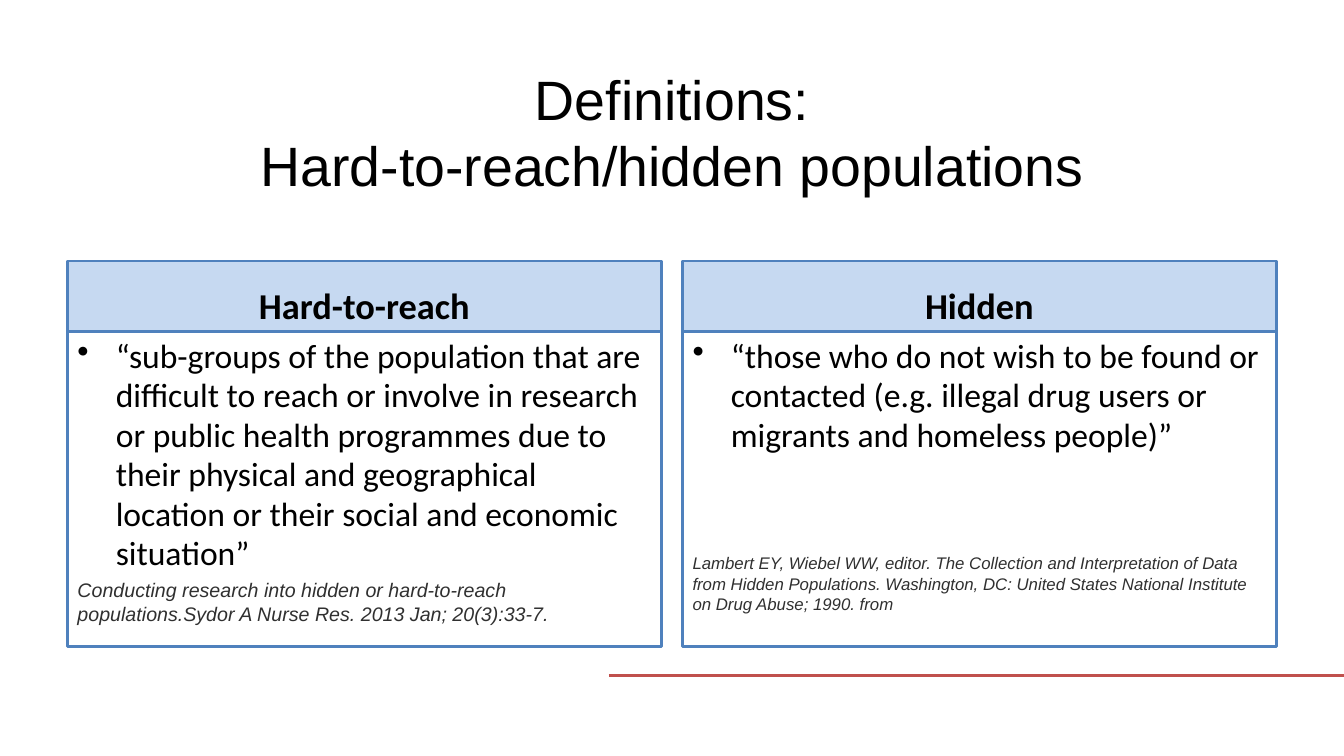
import pptx
import pptx.util
import pptx.dml.color
import pptx.enum.shapes
import pptx.enum.text
from lxml import etree

Inches, Pt = pptx.util.Inches, pptx.util.Pt
RGBColor = pptx.dml.color.RGBColor
ALIGN, ANCHOR = pptx.enum.text.PP_ALIGN, pptx.enum.text.MSO_ANCHOR

BLACK = RGBColor(0x00, 0x00, 0x00)
WHITE = RGBColor(0xFF, 0xFF, 0xFF)
CITATION_GREY = RGBColor(0x30, 0x30, 0x30)
HEADING_FILL = RGBColor(0xC6, 0xD9, 0xF1)
BORDER_BLUE = RGBColor(0x4F, 0x81, 0xBD)
RULE_RED = RGBColor(0xC0, 0x50, 0x4D)

SLIDE_W, SLIDE_H = 13.33, 7.5
MARGIN, GUTTER = 0.67, 0.21
CONTENT_W = SLIDE_W - 2 * MARGIN
COLUMN_W = (CONTENT_W - GUTTER) / 2
COLUMN_TOP, COLUMN_H, HEADING_H = 2.59, 3.82, 0.7
BULLET_INDENT = Inches(0.38)

# heading, definition, citation, citation size, space before citation
DEFINITIONS = [
    ("Hard-to-reach",
     "“sub-groups of the population that are difficult to reach or involve in research "
     "or public health programmes due to their physical and geographical location or "
     "their social and economic situation”",
     "Conducting research into hidden or hard-to-reach populations."
     "Sydor A Nurse Res. 2013 Jan; 20(3):33-7.", 14, 3),
    ("Hidden",
     "“those who do not wish to be found or contacted (e.g. illegal drug users or "
     "migrants and homeless people)”",
     "Lambert EY, Wiebel WW, editor. The Collection and Interpretation of Data from "
     "Hidden Populations. Washington, DC: United States National Institute on Drug "
     "Abuse; 1990. from", 12, 70),
]


def format_text(paragraph, size, face, color=BLACK, align=ALIGN.LEFT, bold=False, italic=False):
    paragraph.alignment = align
    font = paragraph.font
    for run in paragraph.runs:
        font = run.font
        font.size, font.name = Pt(size), face
        font.bold, font.italic = bold, italic
        font.color.rgb = color


def add_bullet(paragraph):
    properties = paragraph._p.get_or_add_pPr()
    properties.set("marL", str(BULLET_INDENT))
    properties.set("indent", str(-BULLET_INDENT))
    namespace = pptx.oxml.ns.qn("a:buChar")
    etree.SubElement(properties, namespace).set("char", "•")


def add_panel(slide, left, top, width, height, fill, anchor):
    """Add a bordered rectangle and return its text frame."""
    panel = slide.shapes.add_shape(
        pptx.enum.shapes.MSO_SHAPE.RECTANGLE,
        Inches(left), Inches(top), Inches(width), Inches(height))
    panel.shadow.inherit = False
    panel.fill.solid()
    panel.fill.fore_color.rgb = fill
    panel.line.color.rgb = BORDER_BLUE
    panel.line.width = Pt(2)
    frame = panel.text_frame
    frame.word_wrap = True
    frame.vertical_anchor = anchor
    return frame


def add_title(slide, left, top, width, height):
    title = slide.shapes.add_textbox(
        Inches(left), Inches(top), Inches(width), Inches(height)).text_frame
    title.word_wrap = True
    title.vertical_anchor = ANCHOR.MIDDLE
    title.text = "Definitions:\nHard-to-reach/hidden populations"
    for line in title.paragraphs:
        format_text(line, 39.6, "Arial", align=ALIGN.CENTER)


def add_definition(slide, left, top, width, height, content):
    """Stack a heading bar on a panel with the definition and its citation."""
    heading, definition, citation, citation_size, citation_gap = content

    bar = add_panel(slide, left, top, width, HEADING_H, HEADING_FILL, ANCHOR.BOTTOM)
    bar.text = heading
    format_text(bar.paragraphs[0], 26, "Calibri", align=ALIGN.CENTER, bold=True)

    body = add_panel(slide, left, top + HEADING_H, width, height - HEADING_H,
                     WHITE, ANCHOR.TOP)
    body.text = f"{definition}\n{citation}"
    quote, reference = body.paragraphs
    add_bullet(quote)
    format_text(quote, 24, "Calibri")
    quote.line_spacing = 0.98
    format_text(reference, citation_size, "Arial", CITATION_GREY, italic=True)
    reference.space_before = Pt(citation_gap)


def add_footer_rule(slide, left, right, y):
    rule = slide.shapes.add_connector(
        pptx.enum.shapes.MSO_CONNECTOR.STRAIGHT,
        Inches(left), Inches(y), Inches(right), Inches(y))
    rule.line.color.rgb = RULE_RED
    rule.line.width = Pt(2.25)
    etree.SubElement(rule._element.spPr, pptx.oxml.ns.qn("a:effectLst"))


def main():
    deck = pptx.Presentation()
    deck.slide_width, deck.slide_height = Inches(SLIDE_W), Inches(SLIDE_H)
    slide = deck.slides.add_slide(deck.slide_layouts[6])

    add_footer_rule(slide, 6.04, SLIDE_W, 6.7)
    add_title(slide, MARGIN, 0.68, CONTENT_W, 1.25)
    for column, content in enumerate(DEFINITIONS):
        left = MARGIN + column * (COLUMN_W + GUTTER)
        add_definition(slide, left, COLUMN_TOP, COLUMN_W, COLUMN_H, content)

    deck.save("out.pptx")


if __name__ == "__main__":
    main()
